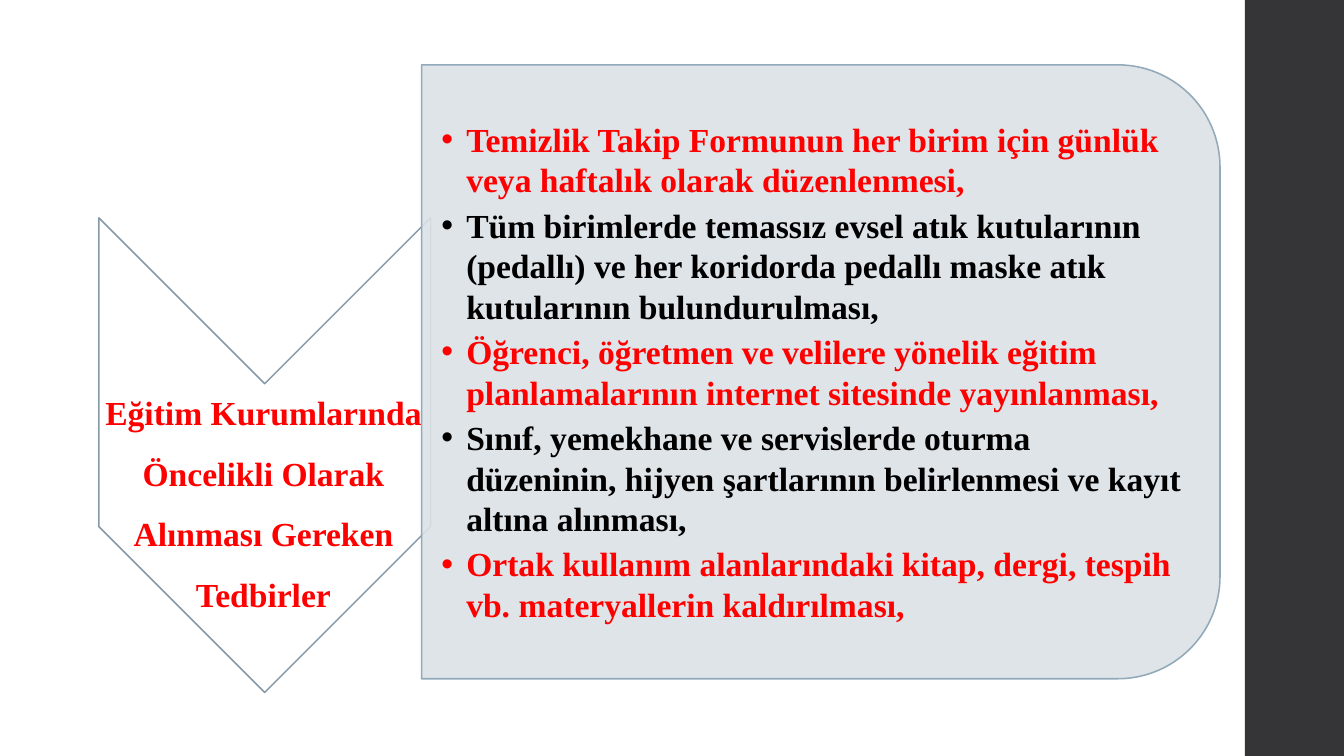
"""Builds a slide on the main measures to take in schools."""
from dataclasses import dataclass

from lxml import etree
from pptx import Presentation
from pptx.dml.color import RGBColor
from pptx.enum.shapes import MSO_SHAPE
from pptx.enum.text import MSO_ANCHOR, MSO_AUTO_SIZE, PP_ALIGN
from pptx.oxml.ns import qn
from pptx.util import Cm, Pt

RECT = MSO_SHAPE.RECTANGLE
CHEVRON = MSO_SHAPE.CHEVRON
PANEL = MSO_SHAPE.ROUND_2_SAME_RECTANGLE
MIDDLE = MSO_ANCHOR.MIDDLE
FIXED = MSO_AUTO_SIZE.NONE
CENTER, LEFT = PP_ALIGN.CENTER, PP_ALIGN.LEFT

TITLE = "Eğitim Kurumlarında Öncelikli Olarak Alınması Gereken Tedbirler"
RULES = [
    "Temizlik Takip Formunun her birim için günlük veya haftalık olarak düzenlenmesi,",
    "Tüm birimlerde temassız evsel atık kutularının (pedallı) ve her koridorda "
    "pedallı maske atık kutularının bulundurulması,",
    "Öğrenci, öğretmen ve velilere yönelik eğitim planlamalarının internet "
    "sitesinde yayınlanması,",
    "Sınıf, yemekhane ve servislerde oturma düzeninin, hijyen şartlarının "
    "belirlenmesi ve kayıt altına alınması,",
    "Ortak kullanım alanlarındaki kitap, dergi, tespih vb. materyallerin kaldırılması,",
]


@dataclass(frozen=True)
class Theme:
    font: str = "Times New Roman"
    size: float = 24
    gap: float = 3.8
    line: float = 1.1
    red: str = "FF0000"
    black: str = "000000"
    white: str = "FFFFFF"
    side: str = "353537"
    arrow: str = "8599A8"
    panel: str = "DCE2E6"
    edge: str = "92A9B9"


class Deck:
    def __init__(self, theme):
        self.theme = theme
        self.show = Presentation()
        self.show.slide_width, self.show.slide_height = Cm(33.87), Cm(19.05)
        self.slide = self.show.slides.add_slide(self.show.slide_layouts[1])

    def shape(self, kind, box, fill, line=None, turn=0, alpha=None):
        item = self.slide.shapes.add_shape(kind, *map(Cm, box))
        item.shadow.inherit = False
        item.rotation = turn
        item.fill.solid()
        item.fill.fore_color.rgb = RGBColor.from_string(fill)
        if alpha:
            color = item.element.spPr.find(qn("a:solidFill"))[0]
            etree.SubElement(color, qn("a:alpha")).set("val", str(alpha * 1000))
        if line:
            item.line.color.rgb = RGBColor.from_string(line)
            item.line.width = Pt(self.theme.line)
        else:
            item.line.fill.background()

    def holder(self, item, box, inset):
        item.left, item.top, item.width, item.height = map(Cm, box)
        item.element.getparent().append(item.element)
        frame = item.text_frame
        frame.word_wrap = True
        frame.auto_size = FIXED
        frame.vertical_anchor = MIDDLE
        frame.margin_left = Cm(inset)
        frame.margin_top = frame.margin_right = frame.margin_bottom = Cm(0.05)
        return frame

    def style(self, para, color, align, space):
        para.alignment = align
        para.line_spacing = space
        para.space_before = Pt(0)
        for run in para.runs:
            run.font.name = self.theme.font
            run.font.size = Pt(self.theme.size)
            run.font.bold = True
            run.font.color.rgb = RGBColor.from_string(color)

    def title(self, text, box):
        frame = self.holder(self.slide.shapes.title, box, 0.05)
        frame.text = text
        self.style(frame.paragraphs[0], self.theme.red, CENTER, 1.5)

    def bullets(self, items, box):
        frame = self.holder(self.slide.placeholders[1], box, 0.48)
        frame.text = "\n".join(items)
        colors = self.theme.red, self.theme.black
        for spot, para in enumerate(frame.paragraphs):
            self.style(para, colors[spot % 2], LEFT, 1.0)
            para.space_after = Pt(self.theme.gap)
            props = para._p.get_or_add_pPr()
            props.set("marL", str(Cm(0.63)))
            props.set("indent", str(-Cm(0.63)))
            etree.SubElement(props, qn("a:buChar")).set("char", "•")


def main():
    theme = Theme()
    deck = Deck(theme)
    deck.shape(RECT, (31.37, 0, 2.5, 19.05), theme.side)
    deck.shape(CHEVRON, (0.69, 7.29, 11.96, 8.36), theme.white, theme.arrow, 90)
    deck.title(TITLE, (2.46, 9.68, 8.36, 5.49))
    deck.shape(PANEL, (12.95, -0.69, 15.47, 20.12), theme.panel, theme.edge, 90, 90)
    deck.bullets(RULES, (10.64, 2.39, 19.35, 13.94))
    deck.show.save("out.pptx")


if __name__ == "__main__":
    main()
